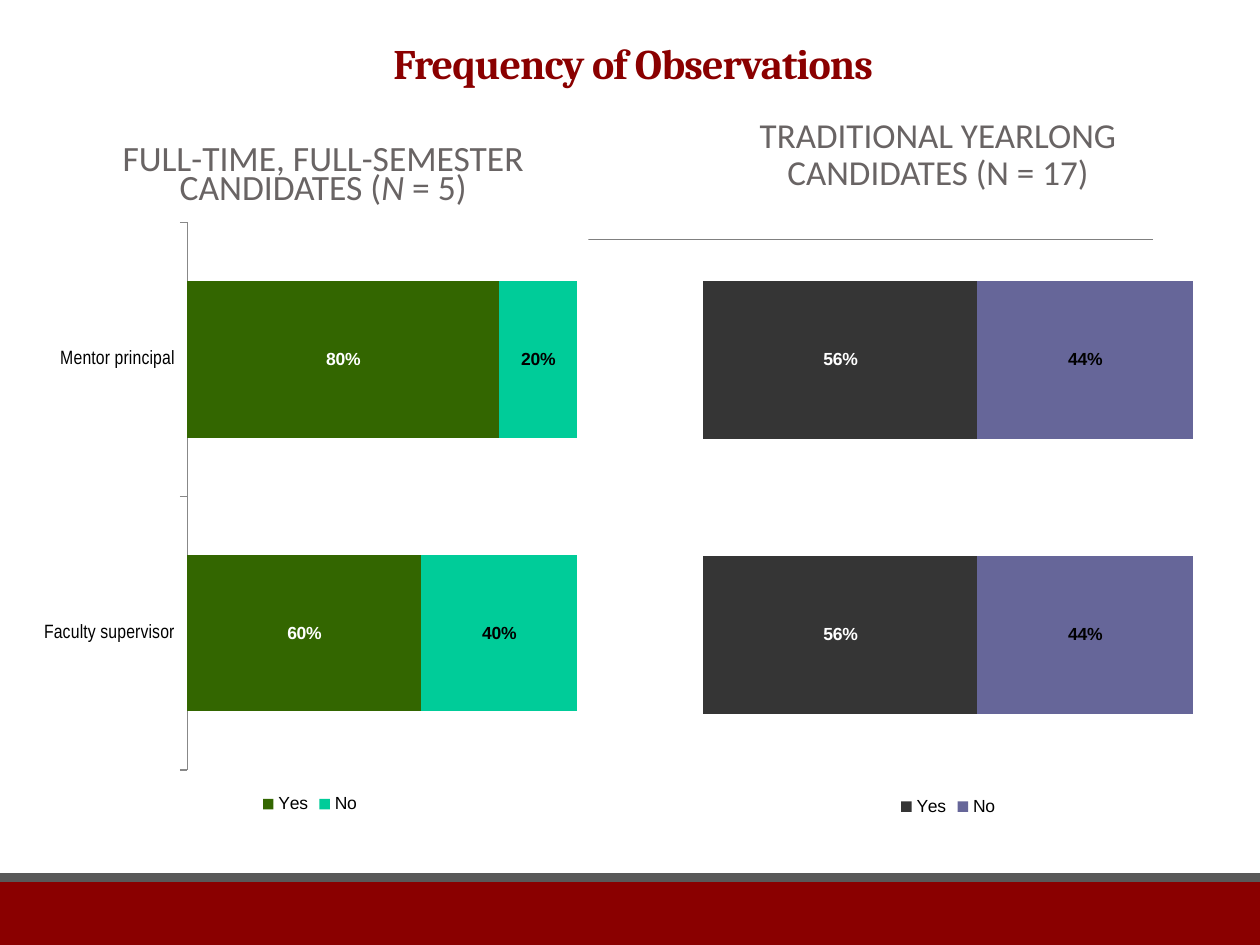
from lxml import etree
from pptx import Presentation
from pptx.chart import data as chart_data
from pptx.dml.color import RGBColor
from pptx.enum import chart as ch, shapes, text
from pptx.oxml.ns import qn
from pptx.util import Inches, Pt

COLORS = {"red": "8A0000", "gray": "595959", "rule": "808080", "heading": "696464",
          "axis": "888888", "black": "000000", "white": "FFFFFF"}
TITLE = "Frequency of Observations"

# Heading runs are (text, italic); plot is x, y, width, height as chart fractions
GROUPS = [
    {"heading": [("FULL-TIME, FULL-SEMESTER CANDIDATES (", False), ("N", True),
                 ("\u00a0=\u00a05)", False)],
     "heading_box": (0.5, 0.83, 4.13, 1), "size": 20.3, "spacing": 0.7, "top_inset": 0.2,
     "chart_box": (0.25, 1.67, 4.42, 4.83), "plot": (0.28, 0.02, 0.7, 0.9),
     "categories": ["Faculty supervisor", "Mentor principal"], "show_categories": True,
     "series": [("Yes", (0.6, 0.8), "336600", "white"),
                ("No", (0.4, 0.2), "00CC99", "black")]},
    {"heading": [("TRADITIONAL YEARLONG CANDIDATES (N = 17)", False)],
     "heading_box": (5.42, 0.83, 4.05, 0.81), "size": 20, "spacing": 0.9, "top_inset": 0.05,
     "chart_box": (5.5, 1.67, 4.05, 4.85), "plot": (0.02, 0.02, 0.96, 0.9),
     "categories": ["1", "2"], "show_categories": False,
     "series": [("Yes", (0.56, 0.56), "353535", "white"),
                ("No", (0.44, 0.44), "666699", "black")]},
]


def rgb(name):
    return RGBColor.from_string(COLORS.get(name, name))


def box(lengths):
    return [Inches(length) for length in lengths]


def style(font, face, size, color, bold=False):
    font.name, font.size, font.bold = face, Pt(size), bold
    font.color.rgb = rgb(color)


def fill_placeholder(holder, place, runs, face, size, color, bold, spacing, anchor):
    holder.left, holder.top, holder.width, holder.height = box(place)
    frame = holder.text_frame
    frame.word_wrap = True
    frame.auto_size = text.MSO_AUTO_SIZE.NONE
    frame.vertical_anchor = anchor
    paragraph = frame.paragraphs[0]
    paragraph.alignment = text.PP_ALIGN.CENTER
    paragraph.line_spacing = spacing
    paragraph.space_before = Pt(0)
    for words, italic in runs:
        run = paragraph.add_run()
        run.text = words
        style(run.font, face, size, color, bold)
        run.font.italic = italic
    return frame


def set_plot_layout(chart, fractions):
    plot_area = chart.plots[0]._element.getparent()
    for old in plot_area.findall(qn("c:layout")):
        plot_area.remove(old)
    layout = etree.Element(qn("c:layout"))
    manual = etree.SubElement(layout, qn("c:manualLayout"))
    settings = [("layoutTarget", "inner"), ("xMode", "edge"), ("yMode", "edge"),
                *zip("xywh", fractions)]
    for tag, value in settings:
        etree.SubElement(manual, qn("c:" + tag)).set("val", str(value))
    plot_area.insert(0, layout)


def fill_chart_background(chart):
    properties = etree.Element(qn("c:spPr"))
    solid = etree.SubElement(properties, qn("a:solidFill"))
    etree.SubElement(solid, qn("a:srgbClr")).set("val", COLORS["white"])
    line = etree.SubElement(properties, qn("a:ln"))
    etree.SubElement(line, qn("a:noFill"))
    chart._chartSpace.find(qn("c:chart")).addnext(properties)


def add_observation_chart(slide, group):
    observations = chart_data.CategoryChartData(number_format="0%")
    observations.categories = group["categories"]
    for name, values, _, _ in group["series"]:
        observations.add_series(name, values)
    chart = slide.shapes.add_chart(ch.XL_CHART_TYPE.BAR_STACKED_100,
                                   *box(group["chart_box"]), observations).chart
    style(chart.font, "Arial", 9, "black")
    chart.has_title = False
    chart.has_legend = True
    chart.legend.position = ch.XL_LEGEND_POSITION.BOTTOM
    chart.legend.include_in_layout = False
    style(chart.legend.font, "Arial", 10, "black")

    chart.value_axis.visible = False
    chart.value_axis.has_major_gridlines = False
    axis = chart.category_axis
    axis.visible = group["show_categories"]
    if axis.visible:
        axis.major_tick_mark = ch.XL_TICK_MARK.OUTSIDE
        axis.format.line.color.rgb = rgb("axis")
        axis.format.line.width = Pt(0.75)
        style(axis.tick_labels.font, "Arial Narrow", 11, "black")
        fill_chart_background(chart)

    plot = chart.plots[0]
    plot.gap_width, plot.overlap = 75, 100
    plot.vary_by_categories = False
    for series, (_, _, color, label_color) in zip(plot.series, group["series"]):
        series.format.fill.solid()
        series.format.fill.fore_color.rgb = rgb(color)
        labels = series.data_labels
        labels.show_value = True
        labels.position = ch.XL_LABEL_POSITION.CENTER
        labels.number_format, labels.number_format_is_linked = "0%", False
        style(labels.font, "Arial", 10, label_color, bold=True)
    set_plot_layout(chart, group["plot"])


def main():
    deck = Presentation()
    deck.slide_width, deck.slide_height = Inches(10), Inches(7.5)
    slide = deck.slides.add_slide(deck.slide_layouts.get_by_name("Comparison"))
    headings = []
    for holder in list(slide.placeholders):
        kind = holder.placeholder_format.type
        if kind == shapes.PP_PLACEHOLDER.BODY:
            headings.append(holder)
        elif kind != shapes.PP_PLACEHOLDER.TITLE:
            holder._element.getparent().remove(holder._element)

    # Footer bands and heading rule
    for top, height, color in [(7, 0.5, "red"), (6.93, 0.07, "gray")]:
        band = slide.shapes.add_shape(shapes.MSO_SHAPE.RECTANGLE, *box((0, top, 10, height)))
        band.shadow.inherit = False
        band.fill.solid()
        band.fill.fore_color.rgb = rgb(color)
        band.line.fill.background()
    rule = slide.shapes.add_connector(shapes.MSO_CONNECTOR.STRAIGHT,
                                      *box((0.98, 1.9, 9.15, 1.9)))
    rule.line.color.rgb = rgb("rule")
    rule.line.width = Pt(0.5)
    etree.SubElement(rule._element.spPr, qn("a:effectLst"))

    # Title
    title = fill_placeholder(slide.shapes.title, (0.9, 0.31, 8.25, 0.44), [(TITLE, False)],
                             "Cambria", 24, "red", True, 0.85, text.MSO_ANCHOR.BOTTOM)
    title.paragraphs[0].runs[0].font._element.set("spc", "-50")

    # One heading and chart per candidate group
    for holder, group in zip(headings, GROUPS):
        frame = fill_placeholder(holder, group["heading_box"], group["heading"], "Calibri",
                                 group["size"], "heading", False, group["spacing"],
                                 text.MSO_ANCHOR.MIDDLE)
        frame.margin_top = Inches(group["top_inset"])
        add_observation_chart(slide, group)

    deck.save("out.pptx")


if __name__ == "__main__":
    main()
